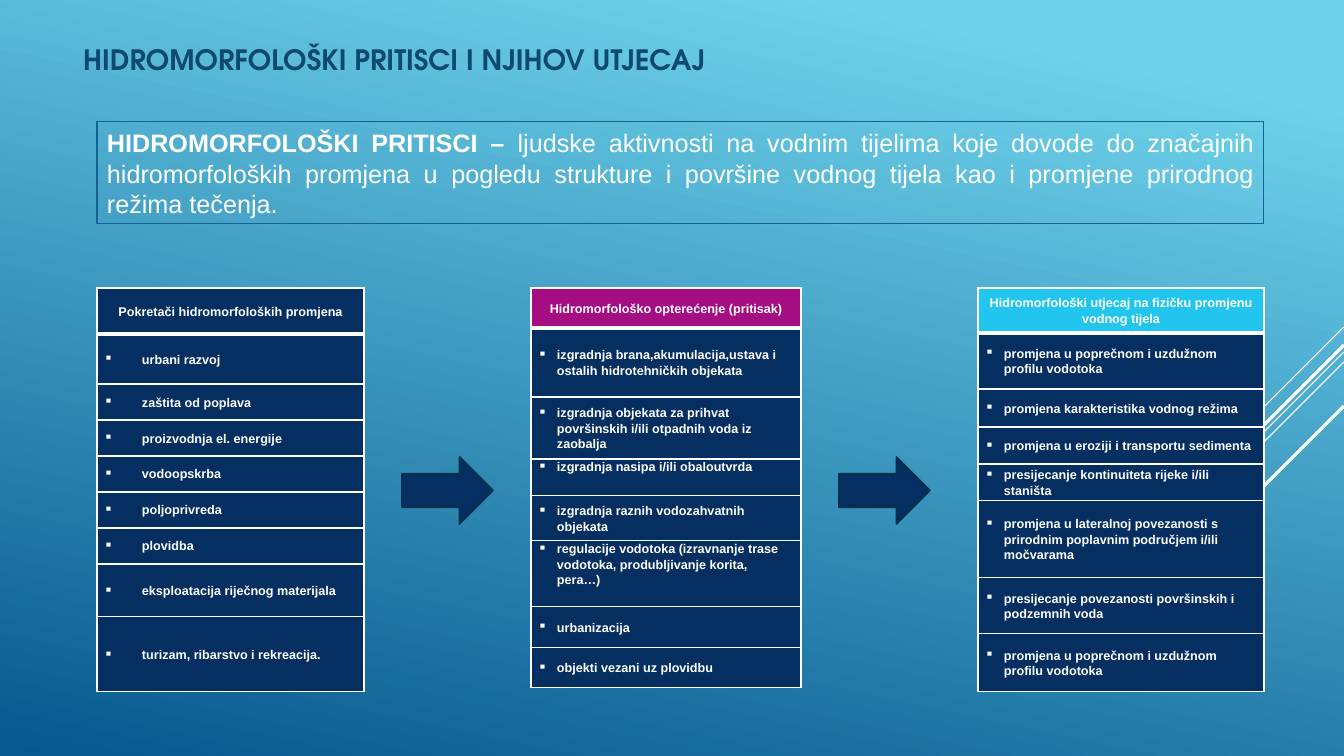
from dataclasses import dataclass

from lxml import etree
from pptx import Presentation
from pptx.dml.color import RGBColor
from pptx.enum.shapes import MSO_CONNECTOR, MSO_SHAPE
from pptx.enum.text import MSO_ANCHOR, MSO_AUTO_SIZE, PP_ALIGN
from pptx.oxml.ns import qn
from pptx.util import Emu, Pt

STRAIGHT = MSO_CONNECTOR.STRAIGHT
RECTANGLE, RIGHT_ARROW = MSO_SHAPE.RECTANGLE, MSO_SHAPE.RIGHT_ARROW
TOP, MIDDLE = MSO_ANCHOR.TOP, MSO_ANCHOR.MIDDLE
FIXED_SIZE = MSO_AUTO_SIZE.NONE
LEFT, CENTER, JUSTIFY = PP_ALIGN.LEFT, PP_ALIGN.CENTER, PP_ALIGN.JUSTIFY

EMU_PER_PX = 914400 / 100.8
SLIDE_WIDTH, SLIDE_HEIGHT = 1344, 756
TITLE_ONLY = 5
TABLE_TOP, ARROW_TOP = 288, 457
CELL_INSET, TAB_STOP = 7, 50


@dataclass(frozen=True)
class Theme:
    """Colours, fonts and type sizes of the slide."""
    sky: str = "6ED2EB"
    deep: str = "06588E"
    white: str = "FFFFFF"
    title: str = "0F496F"
    frame: str = "146194"
    navy: str = "052F61"
    arrow_edge: str = "043148"
    magenta: str = "A50E82"
    cyan: str = "22C5ED"
    title_font: str = "TeX Gyre Adventor"
    body_font: str = "Arial"
    title_size: int = 20
    definition_size: int = 18
    cell_size: int = 9


THEME = Theme()

RAYS = [
    (327, 1243, 0.75),
    (352, 1015, 0.75),
    (362, 1135, 0.75),
    (345, 1151, 2.25),
    (406, 1204, 2.25),
]

DRIVERS = [
    ("Pokretači hidromorfoloških promjena", 46, MIDDLE),
    ("urbani razvoj", 50, MIDDLE),
    ("zaštita od poplava", 36, MIDDLE),
    ("proizvodnja el. energije", 36, MIDDLE),
    ("vodoopskrba", 36, MIDDLE),
    ("poljoprivreda", 36, MIDDLE),
    ("plovidba", 36, MIDDLE),
    ("eksploatacija riječnog materijala", 53, MIDDLE),
    ("turizam, ribarstvo i rekreacija.", 75, MIDDLE),
]
PRESSURES = [
    ("Hidromorfološko opterećenje (pritisak)", 40, MIDDLE),
    ("izgradnja brana,akumulacija,ustava i ostalih hidrotehničkih objekata", 69, MIDDLE),
    ("izgradnja objekata za prihvat površinskih i/ili otpadnih voda iz zaobalja", 62, MIDDLE),
    ("izgradnja nasipa i/ili obaloutvrda", 37, TOP),
    ("izgradnja raznih vodozahvatnih objekata", 45, MIDDLE),
    ("regulacije vodotoka (izravnanje trase vodotoka, produbljivanje korita, pera…)", 66, TOP),
    ("urbanizacija", 41, MIDDLE),
    ("objekti vezani uz plovidbu", 40, MIDDLE),
]
IMPACTS = [
    ("Hidromorfološki utjecaj na fizičku promjenu vodnog tijela", 45, MIDDLE),
    ("promjena u poprečnom i uzdužnom profilu vodotoka", 56, MIDDLE),
    ("promjena karakteristika vodnog režima", 38, MIDDLE),
    ("promjena u eroziji i transportu sedimenta", 37, MIDDLE),
    ("presijecanje kontinuiteta rijeke i/ili staništa", 37, MIDDLE),
    ("promjena u lateralnoj povezanosti s prirodnim poplavnim područjem i/ili močvarama", 77, MIDDLE),
    ("presijecanje povezanosti površinskih i podzemnih voda", 56, MIDDLE),
    ("promjena u poprečnom i uzdužnom profilu vodotoka", 58, MIDDLE),
]


def px(length):
    """Turn slide pixels into EMU."""
    return Emu(round(length * EMU_PER_PX))


def rgb(colour):
    """Turn a hex string into a colour."""
    return RGBColor.from_string(colour)


def set_font(font, name, size, colour, bold=None):
    """Format a font."""
    font.name, font.size, font.bold = name, Pt(size), bold
    font.color.rgb = rgb(colour)


def paint_background(slide):
    """Fill the slide with the sky gradient."""
    fill = slide.background.fill
    fill.gradient()
    fill.gradient_angle = 258
    stops = zip(fill.gradient_stops, (0.1, 1), (THEME.sky, THEME.deep))
    for stop, position, colour in stops:
        stop.position = position
        stop.color.rgb = rgb(colour)


def add_ray(slide, top, left, weight):
    """Draw a diagonal ray down from the right edge at 45 degrees."""
    bottom = top + SLIDE_WIDTH - left
    ray = slide.shapes.add_connector(STRAIGHT, px(SLIDE_WIDTH), px(top), px(left), px(bottom))
    ray.line.color.rgb = rgb(THEME.white)
    ray.line.width = Pt(weight)
    etree.SubElement(ray._element.spPr, qn("a:effectLst"))


def add_title(slide, text):
    """Place and format the title placeholder."""
    title = slide.shapes.title
    title.left, title.top, title.width, title.height = px(73), px(37), px(666), px(44)
    frame = title.text_frame
    frame.text = text
    frame.auto_size = FIXED_SIZE
    frame.vertical_anchor = MIDDLE
    heading = frame.paragraphs[0]
    heading.alignment = LEFT
    set_font(heading.font, THEME.title_font, THEME.title_size, THEME.title, True)


def add_definition(slide, term, meaning):
    """Add the framed definition with its bold term."""
    box = slide.shapes.add_shape(RECTANGLE, px(97), px(122), px(1167), px(102))
    box.shadow.inherit = False
    box.fill.background()
    box.line.color.rgb = rgb(THEME.frame)
    box.line.width = Pt(0.75)
    box.text_frame.word_wrap = True
    sentence = box.text_frame.paragraphs[0]
    sentence.alignment = JUSTIFY
    set_font(sentence.font, THEME.body_font, THEME.definition_size, THEME.white)
    for text, bold in ((term, True), (meaning, False)):
        part = sentence.add_run()
        part.text = text
        part.font.bold = bold


def add_borders(cell, bottom_weight):
    """Draw the white borders of a cell."""
    properties = cell._tc.get_or_add_tcPr()
    sides = (("L", 1), ("R", 1), ("T", 1), ("B", bottom_weight))
    for place, (side, weight) in enumerate(sides):
        border = etree.Element(qn(f"a:ln{side}"), w=str(Pt(weight)))
        paint = etree.SubElement(border, qn("a:solidFill"))
        etree.SubElement(paint, qn("a:srgbClr"), val=THEME.white)
        properties.insert(place, border)


def add_bullet(paragraph, indent):
    """Give a paragraph a hanging square bullet and a tab stop."""
    properties = paragraph._p.get_or_add_pPr()
    properties.set("marL", str(px(indent)))
    properties.set("indent", str(-px(indent)))
    etree.SubElement(properties, qn("a:buChar"), char="▪")
    tabs = etree.SubElement(properties, qn("a:tabLst"))
    etree.SubElement(tabs, qn("a:tab"), pos=str(px(TAB_STOP)), algn="l")


def add_list_table(slide, left, width, rows, header_colour, indent):
    """Add a one-column table with a header and bulleted rows."""
    height = sum(row_height for _, row_height, _ in rows)
    table = slide.shapes.add_table(
        len(rows), 1, px(left), px(TABLE_TOP), px(width), px(height)).table
    table.horz_banding = False
    for index, (text, row_height, anchor) in enumerate(rows):
        is_header = index == 0
        table.rows[index].height = px(row_height)
        cell = table.cell(index, 0)
        cell.text = text
        cell.vertical_anchor = anchor
        cell.margin_left = cell.margin_right = px(CELL_INSET)
        cell.margin_top = cell.margin_bottom = 0
        cell.fill.solid()
        cell.fill.fore_color.rgb = rgb(header_colour if is_header else THEME.navy)
        add_borders(cell, 3 if is_header or (index == 1 and False) else 1)
        entry = cell.text_frame.paragraphs[0]
        if is_header:
            entry.alignment = CENTER
        else:
            add_bullet(entry, indent)
        entry.line_spacing = 1.1
        set_font(entry.font, THEME.body_font, THEME.cell_size, THEME.white, True)


def add_arrow(slide, left):
    """Add a block arrow between two tables."""
    arrow = slide.shapes.add_shape(RIGHT_ARROW, px(left), px(ARROW_TOP), px(91), px(67))
    arrow.shadow.inherit = False
    arrow.fill.solid()
    arrow.fill.fore_color.rgb = rgb(THEME.navy)
    arrow.line.color.rgb = rgb(THEME.arrow_edge)
    arrow.line.width = Pt(1.25)


def main():
    """Build and save the slide."""
    deck = Presentation()
    deck.slide_width, deck.slide_height = px(SLIDE_WIDTH), px(SLIDE_HEIGHT)
    slide = deck.slides.add_slide(deck.slide_layouts[TITLE_ONLY])
    paint_background(slide)
    for ray in RAYS:
        add_ray(slide, *ray)
    add_title(slide, "HIDROMORFOLOŠKI PRITISCI I NJIHOV UTJECAJ")
    add_list_table(slide, 97, 267, DRIVERS, THEME.navy, 38)
    add_list_table(slide, 531, 270, PRESSURES, THEME.magenta, 19)
    add_list_table(slide, 978, 286, IMPACTS, THEME.cyan, 19)
    add_definition(
        slide, "HIDROMORFOLOŠKI PRITISCI – ",
        "ljudske aktivnosti na vodnim tijelima koje dovode do značajnih hidromorfoloških "
        "promjena u pogledu strukture i površine vodnog tijela kao i promjene prirodnog "
        "režima tečenja.")
    for left in (402, 839):
        add_arrow(slide, left)
    deck.save("out.pptx")


if __name__ == "__main__":
    main()
